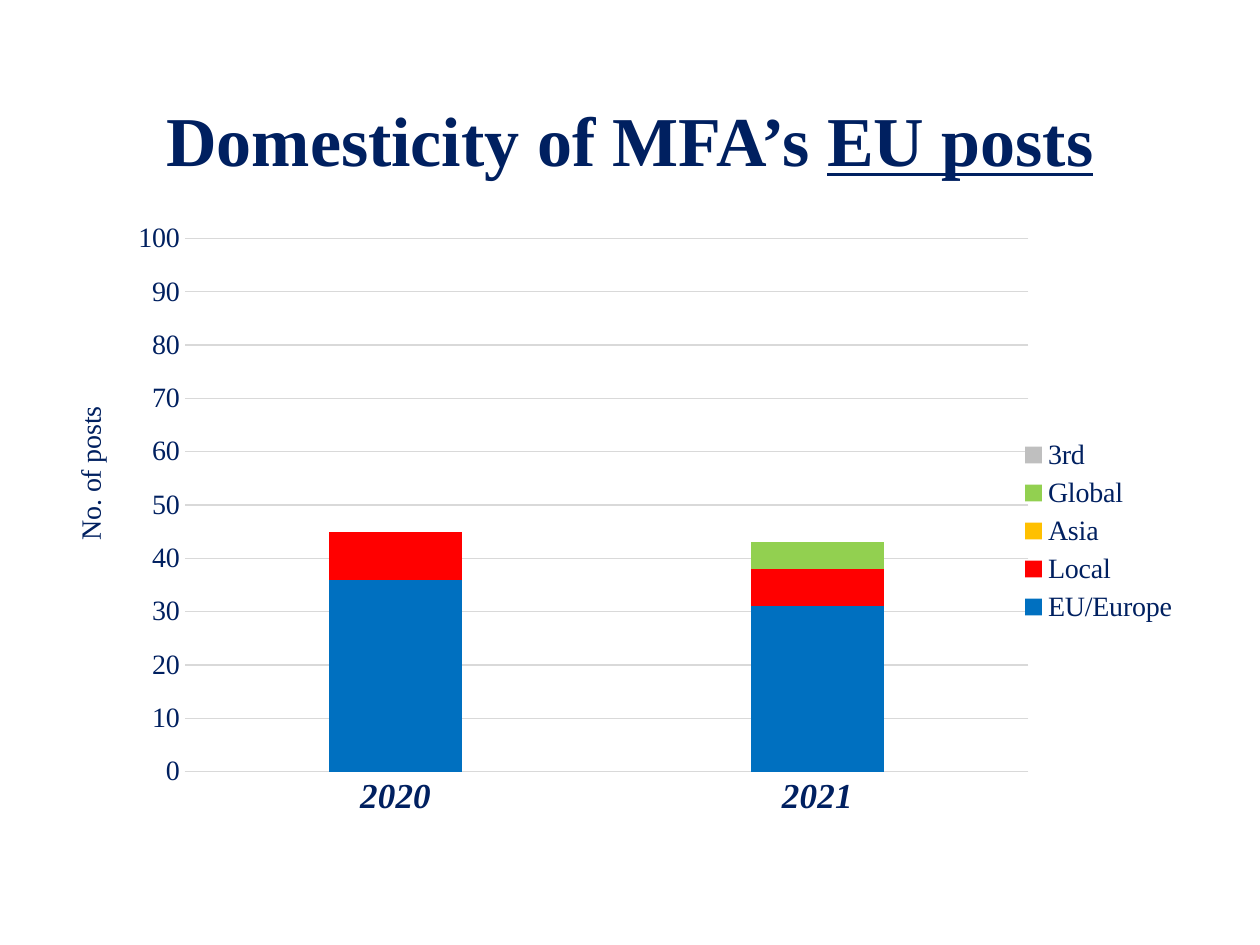
from pptx import Presentation, oxml
from pptx import util as u
from pptx.chart import data
from pptx.dml import color
from pptx.enum import chart as ch, text
from pptx.oxml import ns

Pt = u.Pt
FACE = "Times New Roman"
HUES = {"navy": "002060", "grid": "D9D9D9", "EU/Europe": "0070C0",
        "Local": "FF0000", "Asia": "FFC000", "Global": "92D050", "3rd": "BFBFBF"}
POSTS = {"EU/Europe": (36, 31), "Local": (9, 7), "Asia": (0, 0),
         "Global": (0, 5), "3rd": (0, 0)}


def style(font, size, bold=False, slant=False):
    font.name, font.size, font.bold, font.italic = FACE, Pt(size), bold, slant
    font.color.rgb = color.RGBColor.from_string(HUES["navy"])


def place(node, spot, inner=False, **frac):
    """Give a chart part a manual layout, in fractions of the chart."""
    for old in node.findall(ns.qn("c:layout")):
        node.remove(old)
    tags = '<c:layoutTarget val="inner"/>' if inner else ""
    tags += "".join(f'<c:{k}Mode val="edge"/>' for k in "xy")
    tags += "".join(f'<c:{k} val="{v}"/>' for k, v in frac.items())
    node.insert(spot, oxml.parse_xml(
        f'<c:layout {ns.nsdecls("c")}><c:manualLayout>{tags}'
        '</c:manualLayout></c:layout>'))


deck = Presentation()
deck.slide_width, deck.slide_height = Pt(720), Pt(540)
slide = deck.slides.add_slide(deck.slide_layouts[6])

# Stacked column chart
table = data.CategoryChartData()
table.categories = ["2020", "2021"]
for name, vals in POSTS.items():
    table.add_series(name, vals)
chart = slide.shapes.add_chart(ch.XL_CHART_TYPE.COLUMN_STACKED, Pt(25.2), Pt(103),
                               Pt(669.6), Pt(401), table).chart
style(chart.font, 16)
chart.has_title = False
place(chart._chartSpace.chart.plotArea, 0, True, x=0.12, y=0.083, w=0.72, h=0.76)

plot = chart.plots[0]
plot.gap_width, plot.overlap = 219, 100
plot.vary_by_categories = False
for bar in plot.series:
    bar.format.fill.solid()
    bar.format.fill.fore_color.rgb = color.RGBColor.from_string(HUES[bar.name])

# Axes
years, count = chart.category_axis, chart.value_axis
for axis in (years, count):
    axis.major_tick_mark = axis.minor_tick_mark = ch.XL_TICK_MARK.NONE
style(years.tick_labels.font, 20, True, True)
style(count.tick_labels.font, 16)
count.minimum_scale, count.maximum_scale, count.major_unit = 0, 100, 10
count.has_major_gridlines = True
count.format.line.fill.background()
for line in (years.format.line, count.major_gridlines.format.line):
    line.color.rgb = color.RGBColor.from_string(HUES["grid"])
    line.width = Pt(0.75)
label = count.axis_title
run = label.text_frame.paragraphs[0].add_run()
run.text = "No. of posts"
style(run.font, 16)
frame = label.text_frame._txBody.bodyPr
frame.set("rot", "-5400000")
frame.set("vert", "horz")
place(label._element, 1, x=0.02, y=0.315)

# Legend
chart.has_legend = True
key = chart.legend
key.position = ch.XL_LEGEND_POSITION.RIGHT
key.include_in_layout = False
style(key.font, 16)
place(key._element, 1, x=0.83, y=0.36, w=0.14, h=0.28)

# Title
head = slide.shapes.add_textbox(Pt(12.5), Pt(50.4), Pt(695), Pt(64)).text_frame
head.word_wrap = True
head.vertical_anchor = text.MSO_ANCHOR.MIDDLE
para = head.paragraphs[0]
para.alignment = text.PP_ALIGN.CENTER
para.line_spacing = 0.9
for words, under in (("Domesticity of MFA’s ", False), ("EU posts", True)):
    run = para.add_run()
    run.text = words
    style(run.font, 40, True)
    run.font.underline = under

deck.save("out.pptx")
